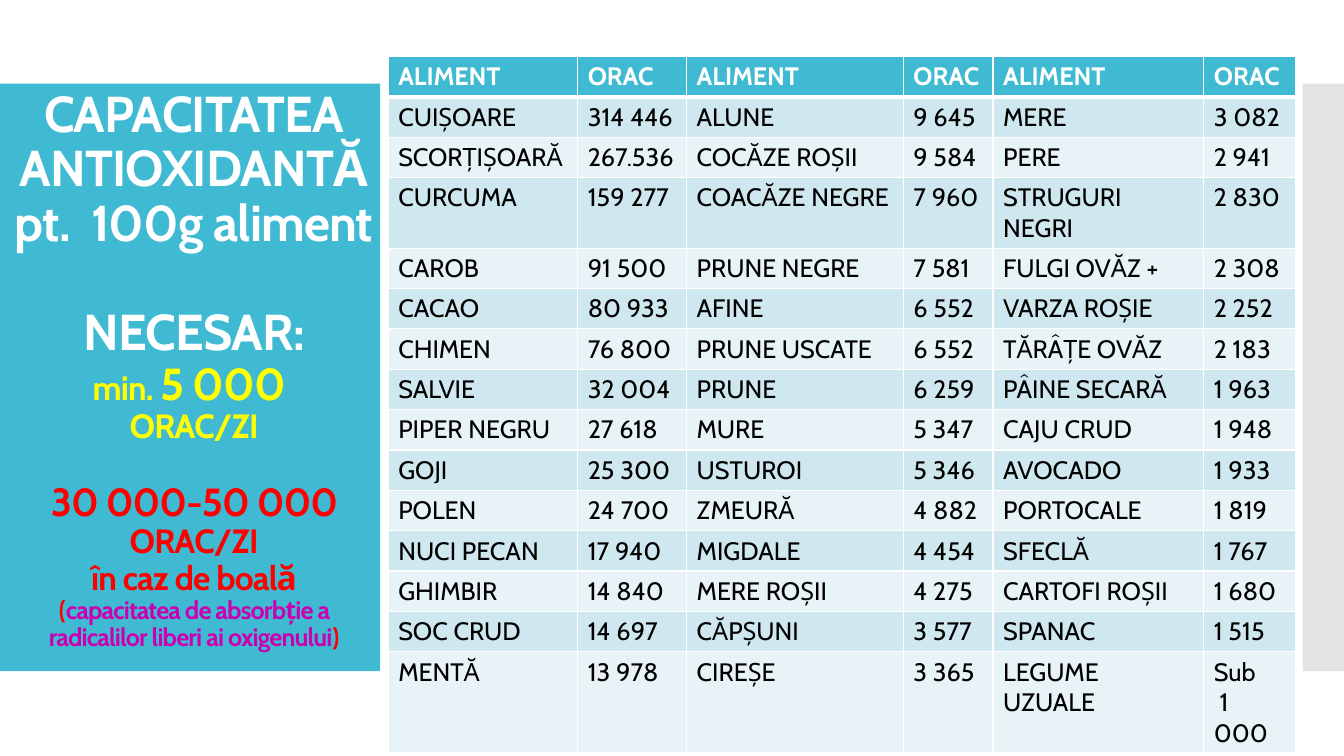
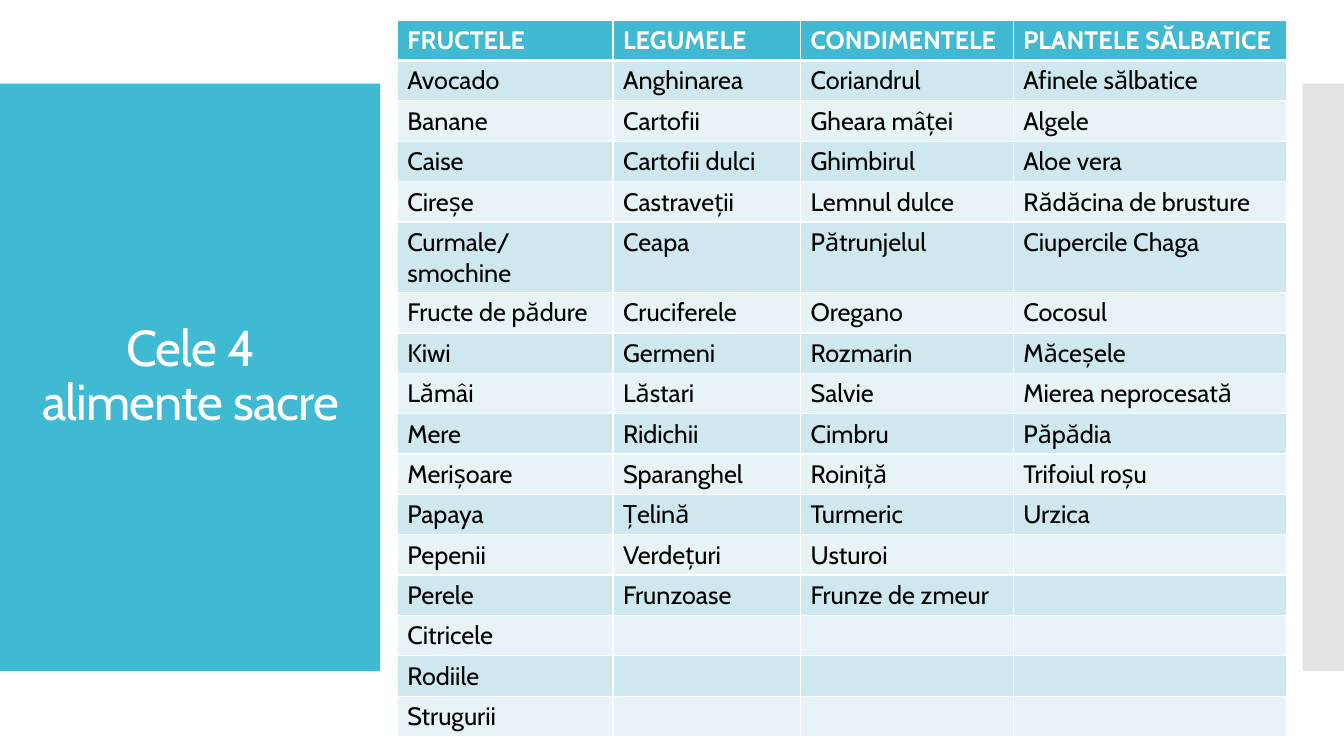
from dataclasses import dataclass

from lxml import etree
from pptx import Presentation
from pptx.dml.color import RGBColor
from pptx.enum import shapes, text
from pptx.oxml import ns
from pptx.util import Inches, Pt


@dataclass(frozen=True)
class Theme:
    font: str = "Cabin"
    teal: str = "40BAD2"
    gray: str = "C8C8C8"
    white: str = "FFFFFF"
    black: str = "000000"
    yellow: str = "FFFF00"
    red: str = "FF0000"
    plum: str = "CB00B1"
    bands: tuple = ("CFE7EE", "E8F3F7")
    title: int = 36
    large: int = 32
    mid: int = 28
    sub: int = 24
    body: int = 18


T = Theme()

ORAC = """ALIMENT|ORAC|ALIMENT|ORAC|ALIMENT|ORAC
CUIȘOARE|314 446|ALUNE|9 645|MERE|3 082
SCORȚIȘOARĂ|267.536|COCĂZE ROȘII|9 584|PERE|2 941
CURCUMA|159 277|COACĂZE NEGRE|7 960|STRUGURI NEGRI|2 830
CAROB|91 500|PRUNE NEGRE|7 581|FULGI OVĂZ +|2 308
CACAO|80 933|AFINE|6 552|VARZA ROȘIE|2 252
CHIMEN|76 800|PRUNE USCATE|6 552|TĂRÂȚE OVĂZ|2 183
SALVIE|32 004|PRUNE|6 259|PÂINE SECARĂ|1 963
PIPER NEGRU|27 618|MURE|5 347|CAJU CRUD|1 948
GOJI|25 300|USTUROI|5 346|AVOCADO|1 933
POLEN|24 700|ZMEURĂ|4 882|PORTOCALE|1 819
NUCI PECAN|17 940|MIGDALE|4 454|SFECLĂ|1 767
GHIMBIR|14 840|MERE ROȘII|4 275|CARTOFI ROȘII|1 680
SOC CRUD|14 697|CĂPȘUNI|3 577|SPANAC|1 515
MENTĂ|13 978|CIREȘE|3 365|LEGUME UZUALE|Sub/ 1 000"""

SACRED = """FRUCTELE|LEGUMELE|CONDIMENTELE|PLANTELE SĂLBATICE
Avocado|Anghinarea|Coriandrul|Afinele sălbatice
Banane|Cartofii|Gheara mâței|Algele
Caise|Cartofii dulci|Ghimbirul|Aloe vera
Cireșe|Castraveții|Lemnul dulce|Rădăcina de brusture
Curmale/smochine|Ceapa|Pătrunjelul|Ciupercile Chaga
Fructe de pădure|Cruciferele|Oregano|Cocosul
Kiwi|Germeni|Rozmarin|Măceșele
Lămâi|Lăstari|Salvie|Mierea neprocesată
Mere|Ridichii|Cimbru|Păpădia
Merișoare|Sparanghel|Roiniță|Trifoiul roșu
Papaya|Țelină|Turmeric|Urzica
Pepenii|Verdețuri|Usturoi|
Perele|Frunzoase|Frunze de zmeur|
Citricele|||
Rodiile|||
Strugurii|||"""


def grid(source):
    return [line.split("|") for line in source.splitlines()]


def add_run(para, words, size, color, bold=False, track=None):
    run = para.add_run()
    run.text = words
    font = run.font
    font.name, font.size, font.bold = T.font, Pt(size), bold
    font.color.rgb = RGBColor.from_string(color)
    if track is not None:
        run._r.get_or_add_rPr().set("spc", str(track))


def add_band(slide, box, color, alpha=None):
    band = slide.shapes.add_shape(shapes.MSO_SHAPE.RECTANGLE, *map(Inches, box))
    band.shadow.inherit = False
    band.line.fill.background()
    band.fill.solid()
    band.fill.fore_color.rgb = RGBColor.from_string(color)
    if alpha is not None:
        tint = band._element.spPr.find(".//" + ns.qn("a:srgbClr"))
        etree.SubElement(tint, ns.qn("a:alpha")).set("val", str(alpha * 1000))


def add_title(slide, box, lines, bold=False):
    """Place centred lines, each given as (points before, [(words, size, colour)])."""
    frame = slide.shapes.add_textbox(*map(Inches, box)).text_frame
    frame.word_wrap = True
    frame.vertical_anchor = text.MSO_ANCHOR.MIDDLE
    for i, (gap, runs) in enumerate(lines):
        para = frame.add_paragraph() if i else frame.paragraphs[0]
        para.alignment = text.PP_ALIGN.CENTER
        para.line_spacing = 0.9
        para.space_before = Pt(gap)
        for words, size, color in runs:
            add_run(para, words, size, color, bold, -60)


def set_edges(cell, base):
    props = cell._tc.get_or_add_tcPr()
    for side, width in zip("LRTB", (1, 1, 1, base)):
        edge = etree.SubElement(props, ns.qn("a:ln" + side), w=str(Pt(width)))
        fill = etree.SubElement(edge, ns.qn("a:solidFill"))
        etree.SubElement(fill, ns.qn("a:srgbClr"), val=T.white)


def fill_cell(cell, parts, head, color):
    set_edges(cell, 3 if head else 1)
    cell.fill.solid()
    cell.fill.fore_color.rgb = RGBColor.from_string(color)
    frame = cell.text_frame
    for i, part in enumerate(parts):
        para = frame.add_paragraph() if i else frame.paragraphs[0]
        para.font.size = Pt(T.body)
        if part:
            add_run(para, part, T.body, T.white if head else T.black, head)


def add_grid(slide, left, top, widths, rows, split=None):
    """Place a banded table; split marks a new paragraph inside a cell."""
    high = 0.4
    table = slide.shapes.add_table(
        len(rows), len(widths), Inches(left), Inches(top),
        Inches(sum(widths)), Inches(high * len(rows))).table
    for col, width in zip(table.columns, widths):
        col.width = Inches(width)
    for r, row in enumerate(rows):
        table.rows[r].height = Inches(high)
        color = T.bands[(r - 1) % 2] if r else T.teal
        for c, words in enumerate(row):
            parts = words.split(split) if split else [words]
            fill_cell(table.cell(r, c), parts, r == 0, color)


def add_page(deck):
    slide = deck.slides.add_slide(deck.slide_layouts[6])
    add_band(slide, (0, 0.83, 3.77, 5.83), T.teal)
    add_band(slide, (12.92, 0.83, 0.42, 5.83), T.gray, 50)
    return slide


def orac_page(deck):
    slide = add_page(deck)
    add_title(slide, (0, 0.71, 3.85, 5.93), [
        (0, [("CAPACITATEA", T.title, T.white)]),
        (0, [("ANTIOXIDANTĂ", T.title, T.white)]),
        (0, [("pt.  100g aliment", T.title, T.white)]),
        (39, [("NECESAR:", T.title, T.white)]),
        (0, [("min. ", T.sub, T.yellow), ("5 000 ", T.large, T.yellow)]),
        (0, [("ORAC/ZI", T.sub, T.yellow)]),
        (26, [("30 000-50 000 ", T.mid, T.red), ("ORAC/ZI", T.sub, T.red)]),
        (0, [("în caz de boală", T.sub, T.red)]),
        (0, [("(", T.body, T.red),
             ("capacitatea de absorbție a radicalilor liberi ai oxigenului",
              T.body, T.plum),
             (")", T.body, T.red)]),
    ], bold=True)
    add_grid(slide, 3.85, 0.56, (1.88, 1.08, 2.15, 0.89, 2.09, 0.91),
             grid(ORAC), split="/")


def sacred_page(deck):
    slide = add_page(deck)
    add_title(slide, (0.28, 1.23, 3.22, 5.03),
              [(0, [("Cele 4 alimente sacre", T.title, T.white)])])
    add_grid(slide, 3.94, 0.2, (2.14, 1.86, 2.11, 2.71), grid(SACRED))


def main():
    deck = Presentation()
    deck.slide_width, deck.slide_height = Inches(13.33), Inches(7.5)
    orac_page(deck)
    sacred_page(deck)
    deck.save("out.pptx")


if __name__ == "__main__":
    main()
